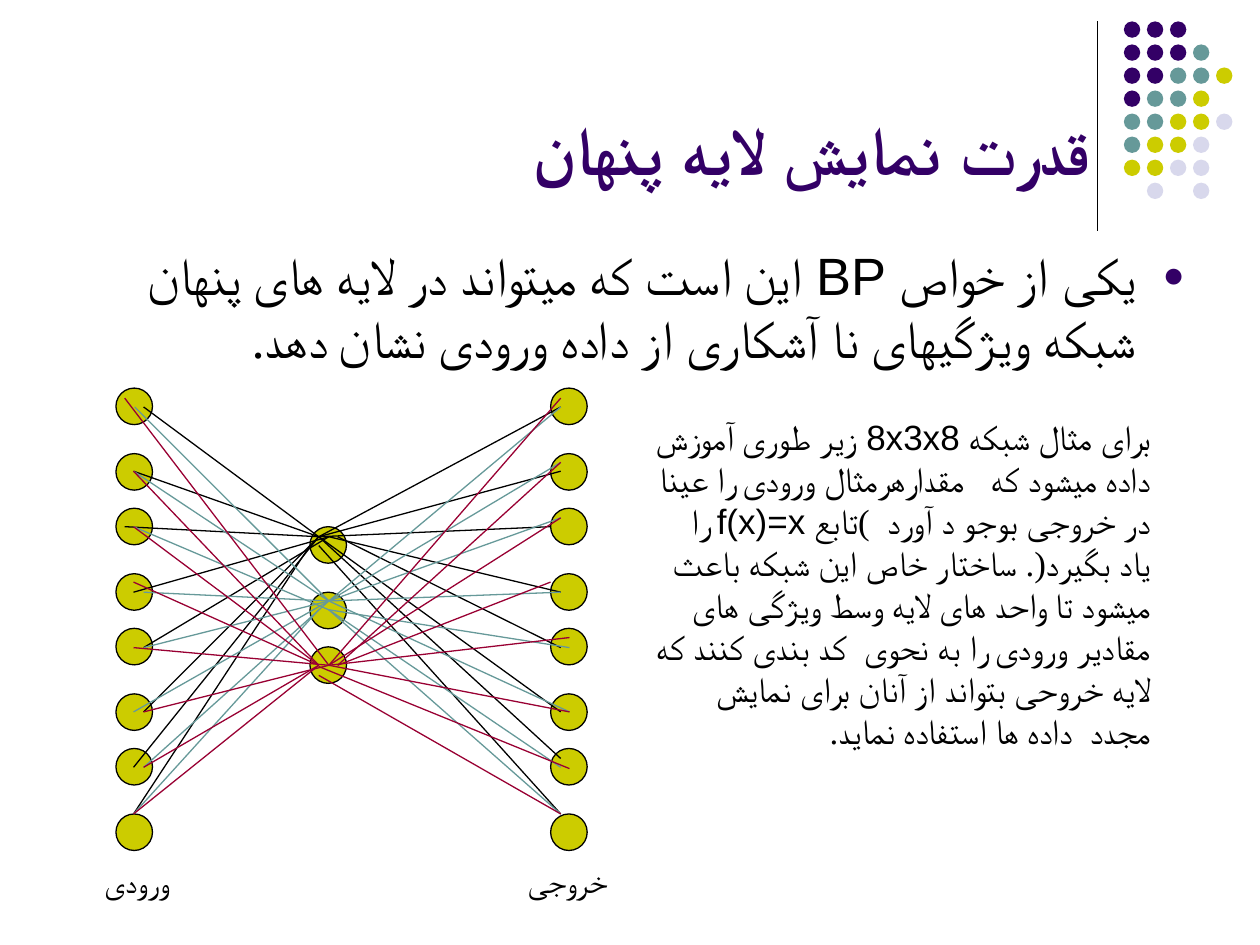
from lxml import etree
from pptx import Presentation
from pptx.dml.color import RGBColor
from pptx.enum.shapes import MSO_CONNECTOR, MSO_SHAPE
from pptx.enum.text import MSO_ANCHOR, PP_ALIGN
from pptx.oxml.ns import qn
from pptx.util import Inches, Pt

LINE, OVAL = MSO_CONNECTOR.STRAIGHT, MSO_SHAPE.OVAL
TOP, BOTTOM, RIGHT = MSO_ANCHOR.TOP, MSO_ANCHOR.BOTTOM, PP_ALIGN.RIGHT
FONT, SCRIPT = "Arial", "Times New Roman"
BLACK, PURPLE, TEAL, OLIVE, PALE, RED = (
    "000000", "330066", "669999", "CCCC00", "D8D8EC", "990033")

TITLE = "قدرت نمایش لایه پنهان"
POINT = ("یکی از خواص BP این است که میتواند در لایه های پنهان "
         "شبکه ویژگیهای نا آشکاری از داده ورودی نشان دهد.")
EXAMPLE = ("برای مثال شبکه 8x3x8 زیر طوری آموزش داده میشود که   مقدارهرمثال "
           "ورودی را عینا در خروجی بوجو د آورد  )تابع f(x)=x را یاد بگیرد(. "
           "ساختار خاص این شبکه باعث میشود تا واحد های لایه وسط ویژگی های "
           "مقادیر ورودی را به نحوی  کد بندی کنند که لایه خروحی بتواند از آنان "
           "برای نمایش مجدد  داده ها استفاده نماید.")
LABELS = [("ورودی", 0.67, 0.78), ("خروجی", 4.08, 0.84)]

# Corner dots: one letter a dot, a space where there is none
DOTS = ["PPP", "PPPT", "PPTTO", "PTTO", "TTOOL", "TOOL", "OOLL", " L L"]
DOT_FILL = {"P": PURPLE, "T": TEAL, "O": OLIVE, "L": PALE}
PITCH = 1.28 / 7

# Layers: left, top, number of nodes
LAYERS = [(0.92, 3.08, 8), (4.37, 3.08, 8), (2.46, 4.18, 3)]
NODE = 0.29
# Nodes stand in pairs
PAIR, STEP = 2.86 / 3, 0.52

# Wires of each hidden node, a row for each input and output:
# input end, hidden end; hidden end, output end
WIRES = {
    BLACK: [
        ((1.14, 3.23), (2.53, 4.26), (2.53, 4.26), (4.45, 3.23)),
        ((1.06, 3.74), (2.53, 4.26), (2.53, 4.26), (4.45, 3.74)),
        ((0.99, 4.18), (2.53, 4.26), (2.53, 4.26), (4.37, 4.18)),
        ((1.06, 4.70), (2.61, 4.26), (2.61, 4.26), (4.45, 4.70)),
        ((1.14, 5.14), (2.61, 4.26), (2.68, 4.26), (4.45, 5.14)),
        ((1.14, 5.65), (2.53, 4.26), (2.53, 4.26), (4.45, 5.65)),
        ((1.06, 6.09), (2.53, 4.26), (2.53, 4.26), (4.45, 6.02)),
        ((1.06, 6.46), (2.46, 4.33), (2.53, 4.33), (4.45, 6.46)),
    ],
    TEAL: [
        ((1.07, 3.23), (2.61, 4.77), (2.61, 4.77), (4.45, 3.23)),
        ((1.06, 3.74), (2.61, 4.77), (2.61, 4.77), (4.45, 3.67)),
        ((1.06, 4.18), (2.61, 4.84), (2.61, 4.77), (4.45, 4.11)),
        ((1.14, 4.70), (2.61, 4.77), (2.61, 4.77), (4.45, 4.70)),
        ((1.14, 5.14), (2.61, 4.77), (2.61, 4.84), (4.52, 5.14)),
        ((1.06, 5.65), (2.61, 4.77), (2.61, 4.77), (4.52, 5.65)),
        ((1.14, 6.09), (2.61, 4.77), (2.61, 4.84), (4.45, 6.09)),
        ((1.06, 6.46), (2.53, 4.84), (2.61, 4.84), (4.45, 6.46)),
    ],
    RED: [
        ((0.99, 3.16), (2.61, 5.28), (2.61, 5.28), (4.45, 3.16)),
        ((1.06, 3.74), (2.53, 5.28), (2.68, 5.28), (4.45, 3.67)),
        ((1.06, 4.18), (2.53, 5.28), (2.61, 5.28), (4.45, 4.11)),
        ((1.06, 4.62), (2.53, 5.28), (2.68, 5.28), (4.37, 4.62)),
        ((1.06, 5.14), (2.61, 5.28), (2.61, 5.28), (4.52, 5.06)),
        ((1.14, 5.65), (2.61, 5.28), (2.61, 5.28), (4.52, 5.65)),
        ((1.14, 6.09), (2.53, 5.28), (2.53, 5.29), (4.52, 6.10)),
        ((1.06, 6.46), (2.53, 5.28), (2.53, 5.36), (4.45, 6.46)),
    ],
}


def color(code):
    return RGBColor.from_string(code)


def add_line(shapes, start, end, code):
    line = shapes.add_connector(LINE, *map(Inches, start + end))
    line.line.color.rgb = color(code)
    line.line.width = Pt(0.75)
    etree.SubElement(line._element.spPr, qn("a:effectLst"))


def add_disc(shapes, left, top, size, fill, edge=None):
    disc = shapes.add_shape(OVAL, *map(Inches, (left, top, size, size)))
    disc.shadow.inherit = False
    disc.fill.solid()
    disc.fill.fore_color.rgb = color(fill)
    if edge:
        disc.line.color.rgb = color(edge)
        disc.line.width = Pt(0.75)
    else:
        disc.line.fill.background()


def add_text(shapes, text, box, size, code=BLACK, bold=False, anchor=TOP,
             wrap=True, bullet=None, script=SCRIPT):
    """Add a right-to-left paragraph; script is the font of Persian text."""
    frame = shapes.add_textbox(*map(Inches, box)).text_frame
    frame.word_wrap = wrap
    frame.vertical_anchor = anchor
    para = frame.paragraphs[0]
    para.alignment = RIGHT
    run = para.add_run()
    run.text = text
    font = run.font
    font.name, font.size, font.bold = FONT, Pt(size), bold
    font.color.rgb = color(code)
    etree.SubElement(font._element, qn("a:cs"), typeface=script)
    props = para._p.get_or_add_pPr()
    props.set("rtl", "1")
    if bullet:
        para.space_before = Pt(size * 0.2)
        props.set("marL", str(Inches(0.38)))
        props.set("indent", str(Inches(-0.38)))
        tint = etree.SubElement(props, qn("a:buClr"))
        etree.SubElement(tint, qn("a:srgbClr"), val=bullet)
        etree.SubElement(props, qn("a:buSzPct"), val="70000")
        etree.SubElement(props, qn("a:buFont"), typeface=FONT)
        etree.SubElement(props, qn("a:buChar"), char="●")


def add_dots(shapes):
    for row, marks in enumerate(DOTS):
        for col, mark in enumerate(marks):
            if mark in DOT_FILL:
                add_disc(shapes, 8.92 + col * PITCH, 0.17 + row * PITCH,
                         0.13, DOT_FILL[mark])


def add_net(shapes):
    for left, top, count in LAYERS:
        for i in range(count):
            drop = i // 2 * PAIR + i % 2 * STEP
            add_disc(shapes, left, top + drop, NODE, OLIVE, BLACK)
    for code, rows in WIRES.items():
        for source, hub_in, hub_out, target in rows:
            add_line(shapes, source, hub_in, code)
            add_line(shapes, hub_out, target, code)
    for text, left, width in LABELS:
        add_text(shapes, text, (left, 6.79, width, 0.4), 18, wrap=False)


def main():
    deck = Presentation()
    deck.slide_width, deck.slide_height = Inches(10), Inches(7.5)
    shapes = deck.slides.add_slide(deck.slide_layouts[6]).shapes
    add_line(shapes, (8.71, 0.17), (8.71, 1.83), BLACK)
    add_dots(shapes.add_group_shape().shapes)
    add_text(shapes, TITLE, (0.5, 0.13, 8.25, 1.42), 39, code=PURPLE,
             bold=True, anchor=BOTTOM, script=FONT)
    add_text(shapes, POINT, (0.5, 1.88, 9, 4.82), 30, bullet=PURPLE)
    add_net(shapes.add_group_shape().shapes)
    add_text(shapes, EXAMPLE, (5.08, 3.25, 4.15, 3.1), 20)
    deck.save("out.pptx")


if __name__ == "__main__":
    main()
